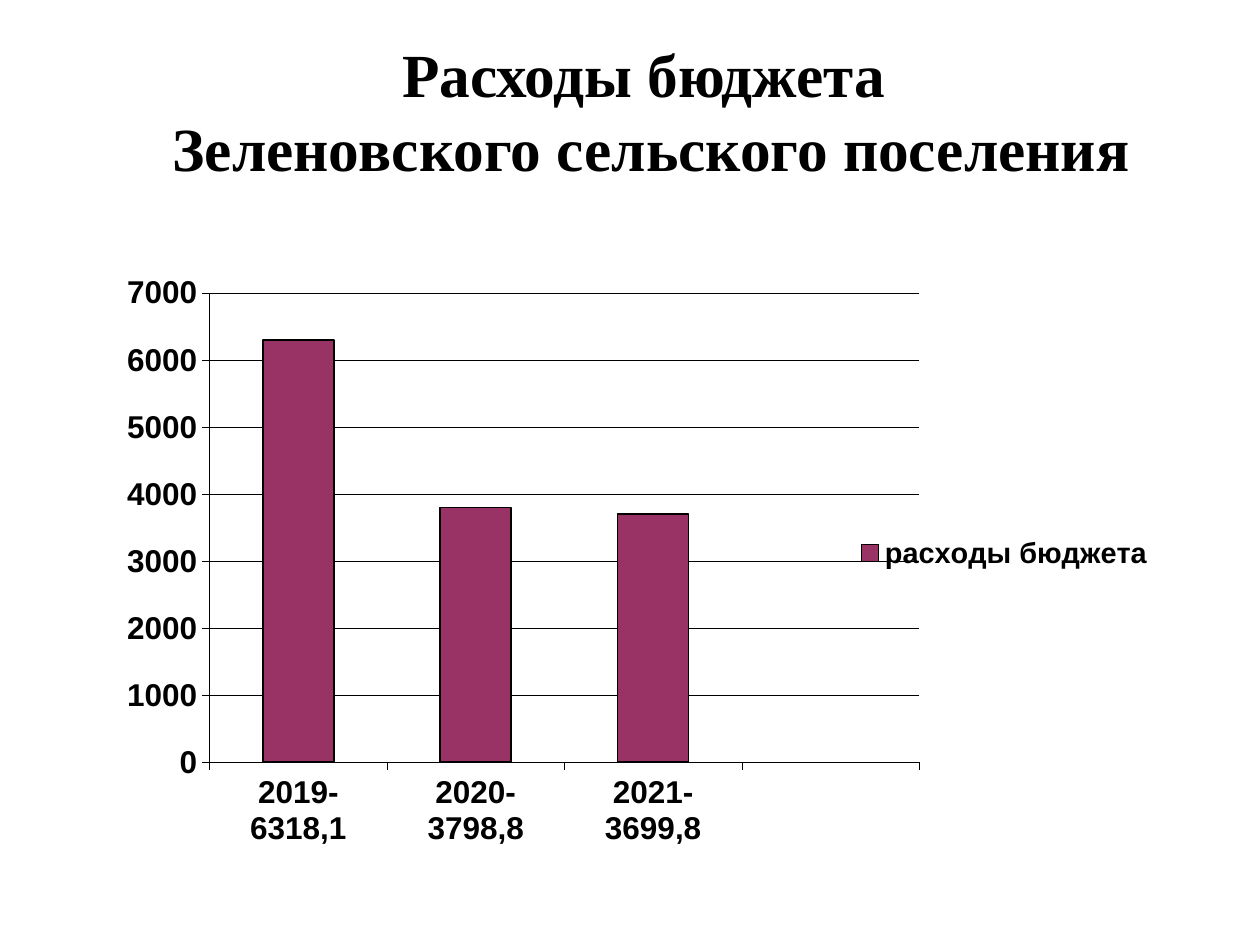
from lxml import etree
from pptx import Presentation
from pptx.chart.data import CategoryChartData
from pptx.dml.color import RGBColor
from pptx.enum.chart import (XL_CHART_TYPE, XL_LEGEND_POSITION,
                             XL_TICK_LABEL_POSITION, XL_TICK_MARK)
from pptx.enum.text import MSO_ANCHOR, PP_ALIGN
from pptx.oxml.ns import qn
from pptx.util import Inches, Pt

TITLE_LINES = ["Расходы бюджета ", "Зеленовского сельского поселения"]
SERIES_NAME = "расходы бюджета"
EXPENSES = [
    ("2019-6318,1", 6300),
    ("2020-3798,8", 3800),
    ("2021-3699,8", 3700),
    ("", None),
]
TITLE_BOX = (0.67, 0.25, 9, 1.25)
CHART_BOX = (0.59, 2.15, 8.87, 4.84)
# Percent of the chart's width and height
PLOT_LAYOUT = {"x": 12.1, "y": 3.6, "w": 63.5, "h": 77}
LEGEND_LAYOUT = {"x": 68.2, "y": 42.8, "w": 30, "h": 7}

BLACK = RGBColor(0x00, 0x00, 0x00)
PLUM = RGBColor(0x99, 0x33, 0x66)
COLUMNS = XL_CHART_TYPE.COLUMN_CLUSTERED
OUTSIDE, NO_TICK = XL_TICK_MARK.OUTSIDE, XL_TICK_MARK.NONE
LOW = XL_TICK_LABEL_POSITION.LOW
RIGHT = XL_LEGEND_POSITION.RIGHT


def set_font(font, size, name="Arial"):
    font.name = name
    font.size = Pt(size)
    font.bold = True
    font.color.rgb = BLACK


def set_line(line, width):
    line.color.rgb = BLACK
    line.width = Pt(width)


def set_layout(element, index, percentages, inner=False):
    """Place a chart part by percentages of the chart's size."""
    for old in element.findall(qn("c:layout")):
        element.remove(old)
    layout = etree.Element(qn("c:layout"))
    manual = etree.SubElement(layout, qn("c:manualLayout"))
    if inner:
        etree.SubElement(manual, qn("c:layoutTarget"), val="inner")
    for key in "xy":
        etree.SubElement(manual, qn(f"c:{key}Mode"), val="edge")
    for key, value in percentages.items():
        etree.SubElement(manual, qn(f"c:{key}"), val=f"{value / 100:.3f}")
    element.insert(index, layout)


def add_title(slide):
    title = slide.shapes.title
    title.left, title.top, title.width, title.height = map(Inches, TITLE_BOX)
    frame = title.text_frame
    frame.text = "\n".join(TITLE_LINES)
    frame.word_wrap = True
    frame.vertical_anchor = MSO_ANCHOR.MIDDLE
    for paragraph in frame.paragraphs:
        paragraph.alignment = PP_ALIGN.CENTER
        set_font(paragraph.font, 35, "Times New Roman")


def add_expense_chart(slide):
    data = CategoryChartData()
    data.categories = [label for label, _ in EXPENSES]
    data.add_series(SERIES_NAME, [value for _, value in EXPENSES])
    chart = slide.shapes.add_chart(COLUMNS, *map(Inches, CHART_BOX), data).chart
    chart.has_title = False
    set_font(chart.font, 18)

    plot = chart.plots[0]
    plot.gap_width = 150
    plot.vary_by_categories = False
    bars = plot.series[0].format
    bars.fill.solid()
    bars.fill.fore_color.rgb = PLUM
    set_line(bars.line, 1)

    for axis in (chart.category_axis, chart.value_axis):
        axis.major_tick_mark = OUTSIDE
        axis.minor_tick_mark = NO_TICK
        set_font(axis.tick_labels.font, 18)
        set_line(axis.format.line, 0.25)
    chart.category_axis.tick_label_position = LOW
    value_axis = chart.value_axis
    value_axis.minimum_scale, value_axis.maximum_scale = 0, 7000
    value_axis.major_unit = 1000
    value_axis.has_major_gridlines = True
    set_line(value_axis.major_gridlines.format.line, 0.25)
    value_axis.tick_labels.number_format = "General"
    value_axis.tick_labels.number_format_is_linked = False

    chart.has_legend = True
    legend = chart.legend
    legend.position = RIGHT
    legend.include_in_layout = False
    set_font(legend.font, 16.5)

    plot_area = next(chart.element.iter(qn("c:plotArea")))
    set_layout(plot_area, 0, PLOT_LAYOUT, inner=True)
    legend_element = next(chart.element.iter(qn("c:legend")))
    set_layout(legend_element, 1, LEGEND_LAYOUT)


def main():
    presentation = Presentation()
    presentation.slide_width = Inches(10)
    presentation.slide_height = Inches(7.5)
    slide = presentation.slides.add_slide(presentation.slide_layouts[5])
    add_title(slide)
    add_expense_chart(slide)
    presentation.save("out.pptx")


if __name__ == "__main__":
    main()
